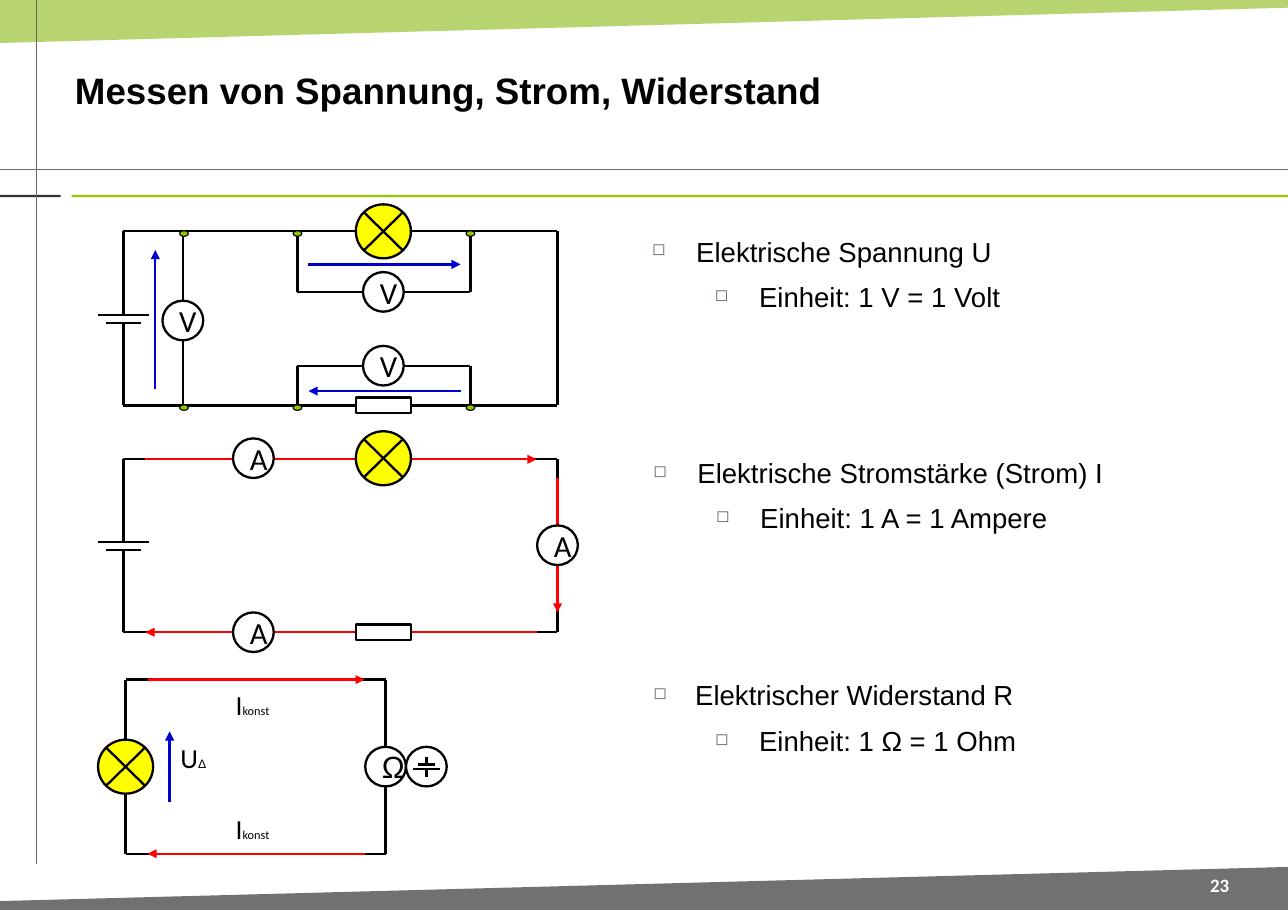
from itertools import pairwise

from lxml.etree import SubElement
from pptx import Presentation
from pptx.dml.color import RGBColor
from pptx.enum.shapes import MSO_CONNECTOR, MSO_SHAPE
from pptx.enum.text import MSO_ANCHOR, PP_ALIGN
from pptx.oxml.ns import qn
from pptx.util import Inches, Pt

COLORS = {
    "black": "000000", "white": "FFFFFF", "lime": "94C600", "band": "95C02A",
    "footer": "707173", "dark": "313130", "guide": "71685A",
    "lamp": "FFFF00", "voltage": "0000CC", "current": "FF0000",
}
TITLE = "Messen von Spannung, Strom, Widerstand"
PAGE_NUMBER = "23"

# Left, top, width, text indents, lines
QUANTITIES = [
    (5.81, 2.08, 4.24, (0.4, 0.97), ("Elektrische Spannung U", "Einheit: 1 V = 1 Volt")),
    (5.82, 4.09, 4.41, (0.4, 0.97), ("Elektrische Stromstärke (Strom) I", "Einheit: 1 A = 1 Ampere")),
    (5.82, 6.11, 3.61, (0.38, 0.96), ("Elektrischer Widerstand R", "Einheit: 1 Ω = 1 Ohm")),
]

# Wires are polylines; parts are placed by their centres
VOLTAGE_CIRCUIT = {
    "wires": [
        [(3.23, 2.1), (1.12, 2.1), (1.12, 2.86)],
        [(1.12, 2.93), (1.12, 3.68), (3.23, 3.68)],
        [(3.74, 2.1), (5.06, 2.1), (5.06, 3.68), (3.74, 3.68)],
        [(1.66, 2.1), (1.66, 2.72)],
        [(1.66, 3.09), (1.66, 3.68)],
        [(2.7, 2.1), (2.7, 2.65), (3.3, 2.65)],
        [(3.67, 2.65), (4.27, 2.65), (4.27, 2.1)],
        [(2.7, 3.68), (2.7, 3.32), (3.3, 3.32)],
        [(3.67, 3.32), (4.27, 3.32), (4.27, 3.68)],
    ],
    "arrows": [
        ((2.8, 2.4), (4.18, 2.4), "voltage"),
        ((4.18, 3.55), (2.8, 3.55), "voltage"),
        ((1.41, 3.53), (1.41, 2.27), "voltage"),
    ],
    "lamps": [(3.48, 2.1)],
    "resistors": [(3.48, 3.68)],
    "nodes": [(x, y) for x in (1.67, 2.7, 4.27) for y in (2.12, 3.7)],
    "meters": [(3.48, 2.65, "V"), (3.48, 3.32, "V"), (1.66, 2.91, "V")],
    "batteries": [(1.12, 2.86, 0.46, 2.93, 0.32)],
}
CURRENT_CIRCUIT = {
    "wires": [
        [(1.32, 4.17), (1.12, 4.17), (1.12, 4.92)],
        [(1.12, 4.99), (1.12, 5.74), (1.37, 5.74)],
        [(4.85, 4.17), (5.06, 4.17), (5.06, 4.34)],
        [(5.06, 5.54), (5.06, 5.74), (4.85, 5.74)],
    ],
    "arrows": [
        ((1.32, 4.17), (4.87, 4.17), "current"),
        ((5.06, 4.34), (5.06, 5.56), "current"),
        ((4.87, 5.74), (1.32, 5.74), "current"),
    ],
    "lamps": [(3.48, 4.16)],
    "resistors": [(3.48, 5.74)],
    "meters": [(2.3, 4.16, "A"), (2.3, 5.74, "A"), (5.06, 4.95, "A")],
    "batteries": [(1.12, 4.92, 0.46, 4.99, 0.32)],
}
RESISTANCE_CIRCUIT = {
    "wires": [
        [(1.34, 6.17), (1.14, 6.17), (1.14, 6.71)],
        [(1.14, 7.2), (1.14, 7.75), (1.37, 7.75)],
        [(3.29, 6.17), (3.5, 6.17), (3.5, 6.78)],
        [(3.5, 7.14), (3.5, 7.75), (3.31, 7.75)],
    ],
    "arrows": [
        ((1.34, 6.17), (3.31, 6.17), "current"),
        ((3.31, 7.75), (1.34, 7.75), "current"),
        ((1.54, 7.28), (1.54, 6.64), "voltage"),
    ],
    "lamps": [(1.14, 6.96)],
    "meters": [(3.5, 6.96, "Ω"), (3.87, 6.96, "")],
    "batteries": [(3.87, 6.94, 0.15, 6.98, 0.24)],
    "leads": [[(3.87, 6.87), (3.87, 6.94)], [(3.87, 6.98), (3.87, 7.05)]],
    "labels": [
        (2.04, 6.2, 0.55, 0.4, "I", "konst", "Calibri"),
        (2.04, 7.32, 0.55, 0.4, "I", "konst", "Calibri"),
        (1.54, 6.68, 0.44, 0.56, "U", "Δ", "Arial"),
    ],
}


def color(name):
    return RGBColor.from_string(COLORS[name])


def style_font(font, size, name="Arial", ink="black", bold=False):
    font.size, font.name, font.bold = Pt(size), name, bold
    font.color.rgb = color(ink)


def set_insets(frame, side, end):
    frame.margin_left = frame.margin_right = Inches(side)
    frame.margin_top = frame.margin_bottom = Inches(end)


def paint(shape, fill, width=0):
    shape.shadow.inherit = False
    shape.fill.solid()
    shape.fill.fore_color.rgb = color(fill)
    if width:
        shape.line.color.rgb = color("black")
        shape.line.width = Pt(width)
    else:
        shape.line.fill.background()


def add_text_box(shapes, *box):
    frame = shapes.add_textbox(*map(Inches, box)).text_frame
    frame.word_wrap = True
    return frame


def add_line(shapes, start, end, ink="black", width=1.5, arrow=False):
    line = shapes.add_connector(MSO_CONNECTOR.STRAIGHT, *map(Inches, (*start, *end)))
    line.line.color.rgb = color(ink)
    line.line.width = Pt(width)
    if arrow:
        SubElement(line.line._get_or_add_ln(), qn("a:tailEnd"), type="triangle")
    SubElement(line._element.spPr, qn("a:effectLst"))


def add_wires(shapes, wires):
    for wire in wires:
        for start, end in pairwise(wire):
            add_line(shapes, start, end)


def add_part(shapes, kind, x, y, width, height, fill, line_width=1.5):
    part = shapes.add_shape(kind, *map(Inches, (x - width / 2, y - height / 2, width, height)))
    paint(part, fill, line_width)
    return part


def draw_circuit(slide, circuit):
    shapes = slide.shapes.add_group_shape().shapes
    add_wires(shapes, circuit["wires"])
    for start, end, ink in circuit["arrows"]:
        add_line(shapes, start, end, ink, arrow=True)
    for x, y in circuit["lamps"]:
        add_part(shapes, MSO_SHAPE.FLOWCHART_SUMMING_JUNCTION, x, y, 0.5, 0.49, "lamp")
    for x, y in circuit.get("resistors", []):
        add_part(shapes, MSO_SHAPE.RECTANGLE, x, y, 0.5, 0.14, "white")
    for x, y in circuit.get("nodes", []):
        add_part(shapes, MSO_SHAPE.FLOWCHART_CONNECTOR, x, y, 0.08, 0.05, "lime", 0.75)
    for x, y, letter in circuit["meters"]:
        meter = add_part(shapes, MSO_SHAPE.FLOWCHART_CONNECTOR, x, y, 0.37, 0.36, "white")
        if letter:
            meter.text_frame.text = letter
            meter.text_frame.vertical_anchor = MSO_ANCHOR.MIDDLE
            paragraph = meter.text_frame.paragraphs[0]
            paragraph.alignment = PP_ALIGN.CENTER
            style_font(paragraph.runs[0].font, 20, "Arial" if letter == "Ω" else "Calibri")
    for x, top, top_width, bottom, bottom_width in circuit["batteries"]:
        for y, width in ((top, top_width), (bottom, bottom_width)):
            add_line(shapes, (x - width / 2, y), (x + width / 2, y))
    add_wires(shapes, circuit.get("leads", []))
    for *box, symbol, index, index_font in circuit.get("labels", []):
        frame = add_text_box(shapes, *box)
        frame.word_wrap = False
        for text, size, name in ((symbol, 18, "Calibri"), (index, 8, index_font)):
            run = frame.paragraphs[0].add_run()
            run.text = text
            style_font(run.font, size, name)


def add_quantity(slide, left, top, width, indents, lines):
    frame = add_text_box(slide.shapes, left, top, width, 0.83)
    set_insets(frame, 0.11, 0.05)
    frame.text = "\n".join(lines)
    for level, (paragraph, indent) in enumerate(zip(frame.paragraphs, indents)):
        properties = paragraph._p.get_or_add_pPr()
        properties.set("marL", str(Inches(indent)))
        properties.set("indent", str(Inches(-0.4)))
        bullet_color = SubElement(properties, qn("a:buClr"))
        SubElement(bullet_color, qn("a:srgbClr"), val=COLORS["guide"])
        SubElement(properties, qn("a:buSzPct"), val="60000")
        SubElement(properties, qn("a:buChar"), char="◻")
        paragraph.level = level
        paragraph.space_before = Pt(8 * level)
        style_font(paragraph.runs[0].font, 18)


def add_band(slide, points, fill):
    corners = [tuple(map(Inches, point)) for point in points]
    builder = slide.shapes.build_freeform(*corners[0])
    builder.add_line_segments(corners[1:], close=True)
    band = builder.convert_to_shape()
    paint(band, fill)
    return band


def main():
    presentation = Presentation()
    presentation.slide_width, presentation.slide_height = Inches(11.69), Inches(8.27)
    slide = presentation.slides.add_slide(presentation.slide_layouts[5])

    # Frame: bands, rules and guides
    header = add_band(slide, [(0, 0), (11.69, 0), (11.69, 0.07), (0, 0.39)], "band")
    SubElement(header.fill._xPr.find(".//" + qn("a:srgbClr")), qn("a:alpha"), val="67000")
    add_band(slide, [(11.69, 8.26), (0, 8.26), (0, 8.18), (11.69, 7.87)], "footer")
    for left, width, fill in ((0, 0.55, "dark"), (0.65, 11.04, "lime")):
        add_part(slide.shapes, MSO_SHAPE.RECTANGLE, left + width / 2, 1.78, width, 0.02, fill, 0)
    add_line(slide.shapes, (11.69, 1.54), (0, 1.54), "guide", 0.75)
    add_line(slide.shapes, (0.33, 7.84), (0.33, 0), "guide", 0.75)

    # Title and page number
    title = slide.shapes.title
    title.left, title.top, title.width, title.height = map(Inches, (0.57, 0.35, 7.32, 0.93))
    number = add_text_box(slide.shapes, 10.73, 7.89, 0.68, 0.29)
    for frame, text, alignment, font in (
        (title.text_frame, TITLE, PP_ALIGN.LEFT, (24, "Arial", "black", True)),
        (number, PAGE_NUMBER, PP_ALIGN.CENTER, (12.4, "Calibri", "white", True)),
    ):
        frame.text = text
        frame.vertical_anchor = MSO_ANCHOR.MIDDLE
        set_insets(frame, 0.11, 0.06)
        frame.paragraphs[0].alignment = alignment
        style_font(frame.paragraphs[0].runs[0].font, *font)

    # Circuits with their quantities
    for circuit in (VOLTAGE_CIRCUIT, CURRENT_CIRCUIT, RESISTANCE_CIRCUIT):
        draw_circuit(slide, circuit)
    for quantity in QUANTITIES:
        add_quantity(slide, *quantity)
    presentation.save("out.pptx")


if __name__ == "__main__":
    main()
